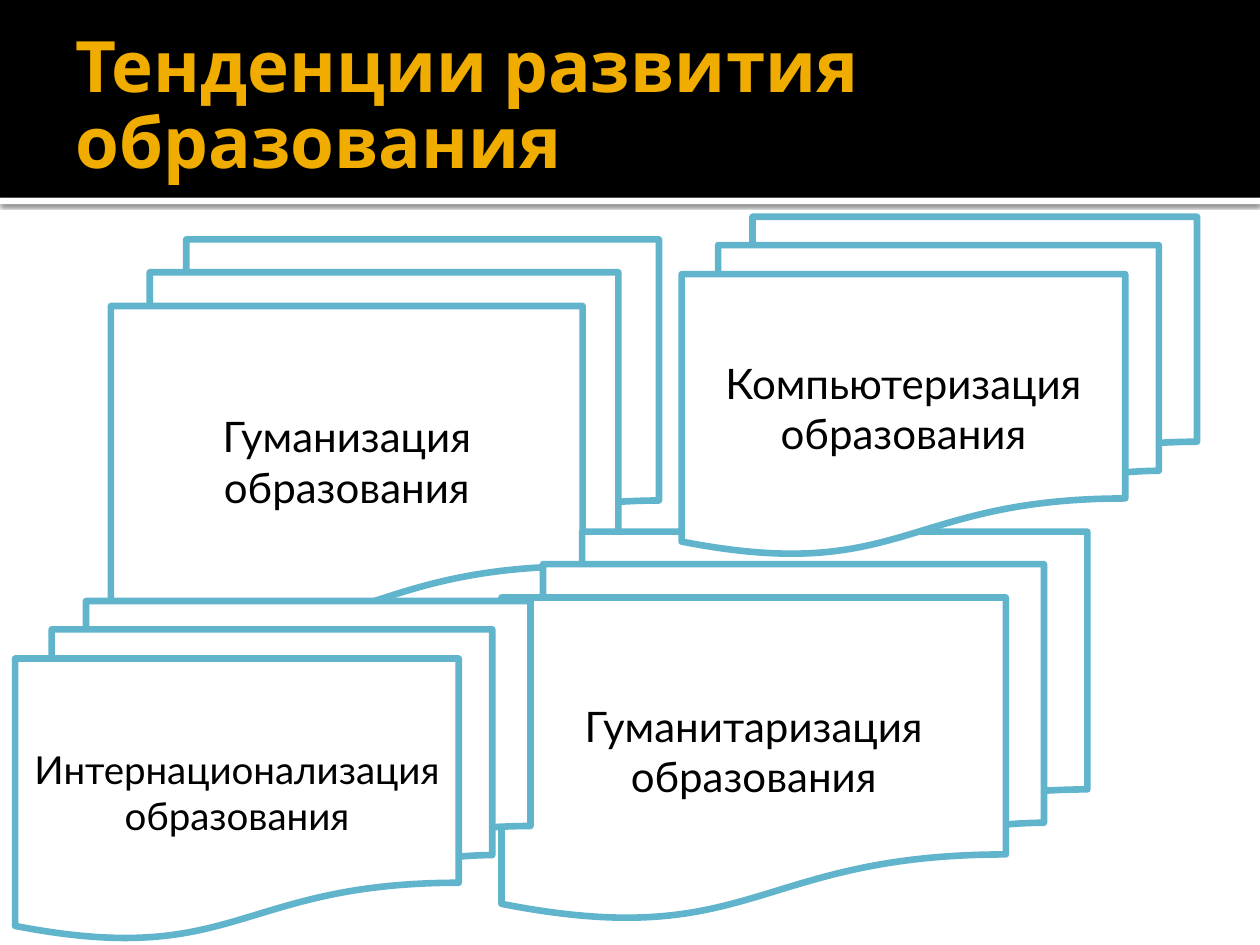
from dataclasses import dataclass

import pptx
import pptx.dml.color
import pptx.enum.shapes
import pptx.enum.text
import pptx.oxml
import pptx.oxml.ns
import pptx.presentation
import pptx.shapes.autoshape
import pptx.slide
import pptx.util

Inches = pptx.util.Inches
Pt = pptx.util.Pt
RGBColor = pptx.dml.color.RGBColor
ShapeType = pptx.enum.shapes.MSO_SHAPE
Anchor = pptx.enum.text.MSO_ANCHOR

WHITE = RGBColor(0xFF, 0xFF, 0xFF)
BLACK = RGBColor(0x00, 0x00, 0x00)
GOLD = RGBColor(0xF0, 0xAD, 0x00)
TEAL = RGBColor(0x60, 0xB5, 0xCC)


@dataclass(frozen=True)
class Trend:
    text: str
    left: float
    top: float
    width: float
    height: float
    font_size: int = 24


TRENDS = (
    Trend("Гуманизация образования", 0.88, 1.9, 4.35, 3.11),
    Trend("Гуманитаризация образования", 3.98, 4.22, 4.65, 3.07),
    Trend("Компьютеризация образования", 5.41, 1.72, 4.09, 2.68),
    Trend("Интернационализация образования", 0.12, 4.77, 4.09, 2.68, 22),
)


def add_band(
    slide: pptx.slide.Slide, top: float, height: float, color: RGBColor
) -> pptx.shapes.autoshape.Shape:
    shape = slide.shapes.add_shape(
        ShapeType.RECTANGLE, 0, Inches(top), Inches(10), Inches(height)
    )
    shape.shadow.inherit = False
    shape.fill.solid()
    shape.fill.fore_color.rgb = color
    shape.line.fill.background()
    return shape


def add_shadow(shape: pptx.shapes.autoshape.Shape) -> None:
    effects = shape.element.spPr.find(pptx.oxml.ns.qn("a:effectLst"))
    effects.append(pptx.oxml.parse_xml(
        f'<a:outerShdw {pptx.oxml.ns.nsdecls("a")} blurRad="{Pt(2.5)}" '
        f'dist="{Pt(0.8)}" dir="5400000" algn="tl" rotWithShape="0">'
        '<a:srgbClr val="000000"><a:alpha val="60000"/></a:srgbClr>'
        '</a:outerShdw>'
    ))


def add_title(slide: pptx.slide.Slide, text: str) -> None:
    shape = slide.shapes.add_textbox(
        Inches(0.5), Inches(0.17), Inches(9), Inches(1.37)
    )
    frame = shape.text_frame
    frame.word_wrap = True
    frame.vertical_anchor = Anchor.MIDDLE
    frame.margin_right = Inches(0.05)
    paragraph = frame.paragraphs[0]
    paragraph.text = text
    paragraph.line_spacing = 0.9
    paragraph.font.name = "Cabin"
    paragraph.font.size = Pt(40.5)
    paragraph.font.bold = True
    paragraph.font.color.rgb = GOLD


def add_trend(slide: pptx.slide.Slide, trend: Trend) -> None:
    shape = slide.shapes.add_shape(
        ShapeType.FLOWCHART_MULTIDOCUMENT,
        Inches(trend.left), Inches(trend.top),
        Inches(trend.width), Inches(trend.height),
    )
    shape.shadow.inherit = False
    shape.fill.solid()
    shape.fill.fore_color.rgb = WHITE
    shape.line.color.rgb = TEAL
    shape.line.width = Pt(3.78)
    frame = shape.text_frame
    frame.word_wrap = True
    frame.vertical_anchor = Anchor.MIDDLE
    paragraph = frame.paragraphs[0]
    paragraph.text = trend.text
    paragraph.alignment = pptx.enum.text.PP_ALIGN.CENTER
    paragraph.font.name = "Lato"
    paragraph.font.size = Pt(trend.font_size)
    paragraph.font.color.rgb = BLACK


def build_presentation() -> pptx.presentation.Presentation:
    presentation = pptx.Presentation()
    presentation.slide_width = Inches(10)
    presentation.slide_height = Inches(7.5)
    slide = presentation.slides.add_slide(presentation.slide_layouts[6])
    slide.background.fill.solid()
    slide.background.fill.fore_color.rgb = WHITE
    add_shadow(add_band(slide, 1.57, 0.05, WHITE))
    add_band(slide, 0, 1.57, BLACK)
    add_title(slide, "Тенденции развития образования")
    for trend in TRENDS:
        add_trend(slide, trend)
    return presentation


if __name__ == "__main__":
    build_presentation().save("out.pptx")
